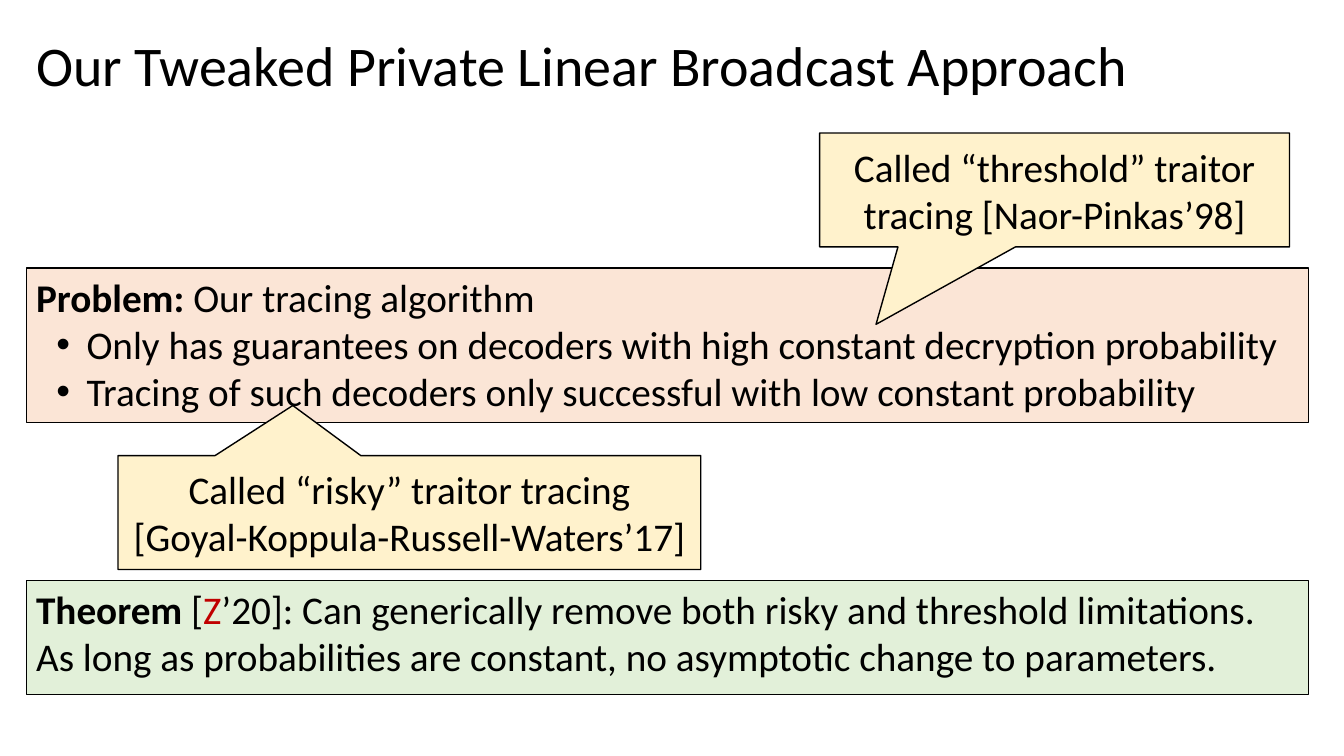
from dataclasses import dataclass

from lxml import etree
from pptx import Presentation
from pptx.dml.color import RGBColor
from pptx.enum.shapes import MSO_SHAPE
from pptx.enum.text import MSO_ANCHOR, MSO_AUTO_SIZE, PP_ALIGN
from pptx.oxml.ns import qn
from pptx.slide import Slide
from pptx.text.text import TextFrame
from pptx.util import Emu, Pt

RECTANGLE = MSO_SHAPE.RECTANGLE
CALLOUT = MSO_SHAPE.RECTANGULAR_CALLOUT
TOP, MIDDLE = MSO_ANCHOR.TOP, MSO_ANCHOR.MIDDLE
LEFT, CENTER = PP_ALIGN.LEFT, PP_ALIGN.CENTER
FIT_TEXT = MSO_AUTO_SIZE.SHAPE_TO_FIT_TEXT

FONT = "Calibri"
TITLE_SIZE, BODY_SIZE = 40, 28
BLACK, RED = "000000", "C00000"
PEACH, CREAM, GREEN = "FBE5D6", "FFF2CC", "E2F0D9"
EMU_PER_PX = 9144  # 100 px to the inch
BULLET_MARGIN, BULLET_HANG = 50, -30


@dataclass(frozen=True)
class Span:
    text: str
    bold: bool = False
    color: str = BLACK


@dataclass(frozen=True)
class Line:
    spans: tuple[Span, ...]
    bullet: bool = False


@dataclass(frozen=True)
class Box:
    left: int
    top: int
    width: int
    height: int
    fill: str
    lines: tuple[Line, ...]
    tip: tuple[float, float] | None = None  # callout tip, relative to the centre


STATEMENT = {"left": 26, "width": 1272}
CALLOUT_HEIGHT = 113

BOXES = (
    Box(**STATEMENT, top=266, height=153, fill=PEACH, lines=(
        Line((Span("Problem: ", bold=True), Span("Our tracing algorithm"))),
        Line((Span("Only has guarantees on decoders with high constant "
                   "decryption probability"),), bullet=True),
        Line((Span("Tracing of such decoders only successful with low "
                   "constant probability"),), bullet=True),
    )),
    Box(813, 132, 466, CALLOUT_HEIGHT, CREAM, tip=(-0.38, 1.18), lines=(
        Line((Span("Called “threshold” traitor tracing [Naor-Pinkas’98]"),)),
    )),
    Box(117, 452, 578, CALLOUT_HEIGHT, CREAM, tip=(-0.2, -0.94), lines=(
        Line((Span("Called “risky” traitor tracing "
                   "[Goyal-Koppula-Russell-Waters’17]"),)),
    )),
    Box(**STATEMENT, top=576, height=113, fill=GREEN, lines=(
        Line((
            Span("Theorem ", bold=True),
            Span("["),
            Span("Z", color=RED),
            Span("’20]: Can generically remove both risky and threshold "
                 "limitations. As long as probabilities are constant, "
                 "no asymptotic change to parameters."),
        )),
    )),
)


def px(length: int) -> Emu:
    return Emu(length * EMU_PER_PX)


def rgb(color: str) -> RGBColor:
    return RGBColor.from_string(color)


def write_lines(frame: TextFrame, lines: tuple[Line, ...], size: int,
                align: PP_ALIGN) -> None:
    for index, line in enumerate(lines):
        para = frame.add_paragraph() if index else frame.paragraphs[0]
        para.alignment = align
        para.font.name = FONT
        para.font.size = Pt(size)
        para.font.color.rgb = rgb(BLACK)
        if line.bullet:
            properties = para._p.get_or_add_pPr()
            properties.set("marL", str(px(BULLET_MARGIN)))
            properties.set("indent", str(px(BULLET_HANG)))
            # Bullet marks come before the default run properties
            mark = etree.Element(qn("a:buChar"), char="•")
            properties.insert(0, mark)
            properties.insert(0, etree.Element(qn("a:buFont"), typeface="Arial"))
        for span in line.spans:
            run = para.add_run()
            run.text = span.text
            if span.bold:
                run.font.bold = True
            # Shapes carry a white text style, so each run names its colour
            run.font.color.rgb = rgb(span.color)


def draw_title(page: Slide, text: str) -> None:
    title = page.shapes.add_textbox(px(26), px(25), px(1113), px(77))
    title.text_frame.word_wrap = False
    title.text_frame.auto_size = FIT_TEXT
    write_lines(title.text_frame, (Line((Span(text),)),), TITLE_SIZE, LEFT)


def draw_box(page: Slide, box: Box) -> None:
    shape = page.shapes.add_shape(
        CALLOUT if box.tip else RECTANGLE,
        px(box.left), px(box.top), px(box.width), px(box.height))
    shape.shadow.inherit = False
    shape.fill.solid()
    shape.fill.fore_color.rgb = rgb(box.fill)
    shape.line.color.rgb = rgb(BLACK)
    shape.line.width = Pt(1)
    if box.tip:
        shape.adjustments[0], shape.adjustments[1] = box.tip
    frame = shape.text_frame
    frame.word_wrap = True
    frame.vertical_anchor = MIDDLE if box.tip else TOP
    write_lines(frame, box.lines, BODY_SIZE, CENTER if box.tip else LEFT)


def main() -> None:
    deck = Presentation()
    deck.slide_width, deck.slide_height = px(1333), px(750)
    page = deck.slides.add_slide(deck.slide_layouts[6])

    # Title, then statements and callouts from back to front
    draw_title(page, "Our Tweaked Private Linear Broadcast Approach")
    for box in BOXES:
        draw_box(page, box)

    deck.save("out.pptx")


if __name__ == "__main__":
    main()
